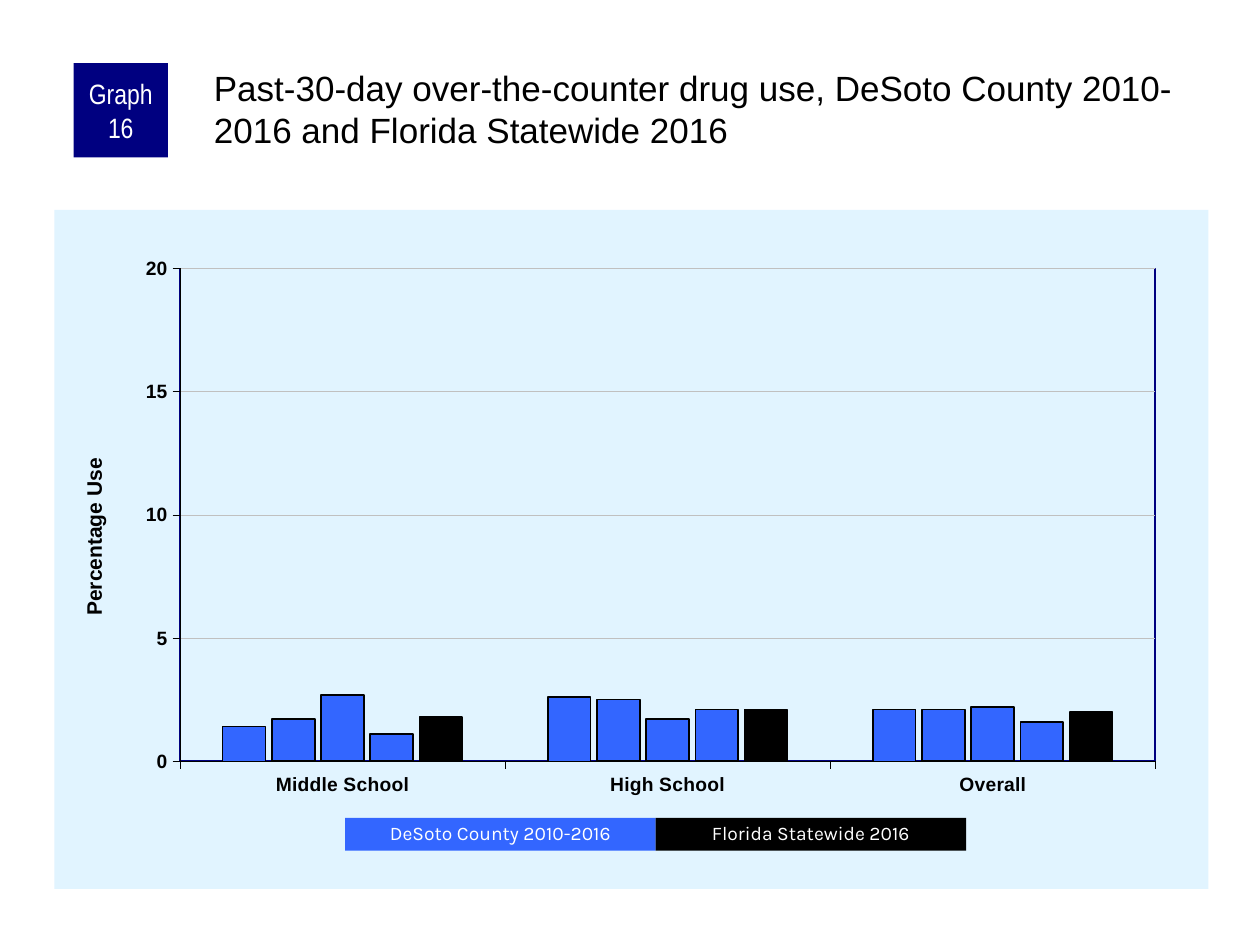
"""Build a slide with a column chart of over-the-counter drug use."""
from dataclasses import dataclass

from lxml import etree
from pptx import Presentation
from pptx.chart.data import CategoryChartData
from pptx.dml.color import RGBColor
from pptx.enum import chart as ch
from pptx.enum import shapes, text
from pptx.oxml import parse_xml
from pptx.oxml.ns import nsdecls, qn
from pptx.util import Pt


@dataclass(frozen=True)
class Theme:
    navy: str = "000080"
    blue: str = "3366FF"
    black: str = "000000"
    white: str = "FFFFFF"
    sky: str = "E1F4FF"
    grey: str = "C0C0C0"
    head: float = 20
    badge: float = 16
    axis: float = 12
    label: float = 11
    base: float = 8


@dataclass(frozen=True)
class Box:
    left: float
    top: float
    width: float
    height: float

    def pts(self) -> list:
        return [Pt(v) for v in (self.left, self.top, self.width, self.height)]


@dataclass(frozen=True)
class Tile:
    words: str
    box: Box
    fill: str
    face: str
    size: float
    frame: dict
    space: float = 1


@dataclass(frozen=True)
class Bar:
    name: str
    vals: tuple
    fill: str
    line: float = 1


T = Theme()
GROUPS = ("Middle School", "High School", "Overall")
BARS = (
    Bar("Series 1", (1.4, 2.6, 2.1), T.blue, 0.75),
    Bar("Series 2", (1.7, 2.5, 2.1), T.blue),
    Bar("Series 3", (2.7, 1.7, 2.2), T.blue),
    Bar("Series 4", (1.1, 2.1, 1.6), T.blue),
    Bar("Series 5", (1.8, 2.1, 2.0), T.black),
)
KEYS = (("DeSoto County 2010-2016", T.blue), ("Florida Statewide 2016", T.black))
KEY = Box(197.3, 467.4, 177.4, 18.7)
BADGE = Tile("Graph 16", Box(42, 36, 54, 54), T.navy, "Arial Narrow", T.badge,
             {"margin_left": Pt(3.6), "margin_right": Pt(3.6),
              "margin_top": 0, "margin_bottom": 0})


def put(obj, vals: dict) -> None:
    for name, val in vals.items():
        setattr(obj, name, val)


def ink(font, size: float, hue: str, face: str = "Arial", bold: bool = False) -> None:
    put(font, {"size": Pt(size), "name": face, "bold": bold})
    font.color.rgb = RGBColor.from_string(hue)


def paint(fill, hue: str) -> None:
    fill.solid()
    fill.fore_color.rgb = RGBColor.from_string(hue)


def rule(line, hue: str, width: float) -> None:
    line.color.rgb = RGBColor.from_string(hue)
    line.width = Pt(width)


def head(slide, words: str, box: Box) -> None:
    title = slide.shapes.title
    put(title, dict(zip(("left", "top", "width", "height"), box.pts())))
    frame = title.text_frame
    frame.text = words
    put(frame, {"margin_left": Pt(2.2), "margin_top": Pt(2.2), "margin_right": 0,
                "margin_bottom": 0, "word_wrap": True,
                "auto_size": text.MSO_AUTO_SIZE.NONE,
                "vertical_anchor": text.MSO_ANCHOR.TOP})
    para = frame.paragraphs[0]
    para.alignment = text.PP_ALIGN.LEFT
    ink(para.runs[0].font, T.head, T.black)


def tile(slide, item: Tile) -> None:
    shape = slide.shapes.add_shape(shapes.MSO_SHAPE.RECTANGLE, *item.box.pts())
    shape.shadow.inherit = False
    paint(shape.fill, item.fill)
    shape.line.fill.background()
    frame = shape.text_frame
    frame.text = item.words
    put(frame, {"word_wrap": True, "vertical_anchor": text.MSO_ANCHOR.MIDDLE,
                **item.frame})
    para = frame.paragraphs[0]
    put(para, {"alignment": text.PP_ALIGN.CENTER, "line_spacing": item.space})
    ink(para.runs[0].font, item.size, T.white, item.face)


def place(node, spot: dict) -> None:
    slot = node.find(qn("c:layout"))
    if slot is None:
        slot = etree.Element(qn("c:layout"))
        node.insert(0, slot)
    area = etree.SubElement(slot, qn("c:manualLayout"))
    for tag, val in spot.items():
        etree.SubElement(area, qn(f"c:{tag}")).set("val", str(val))


def skin(fill: str, line: str):
    return parse_xml(f'<c:spPr {nsdecls("c", "a")}>{fill}{line}</c:spPr>')


def solid(hue: str) -> str:
    return f'<a:solidFill><a:srgbClr val="{hue}"/></a:solidFill>'


def graph(slide, box: Box) -> None:
    data = CategoryChartData()
    data.categories = GROUPS
    for bar in BARS:
        data.add_series(bar.name, bar.vals)
    chart = slide.shapes.add_chart(
        ch.XL_CHART_TYPE.COLUMN_CLUSTERED, *box.pts(), data).chart
    put(chart, {"has_legend": False, "has_title": False})
    ink(chart.font, T.base, T.black)
    plot = chart.plots[0]
    put(plot, {"gap_width": 200, "overlap": -15, "vary_by_categories": False})
    for bar, series in zip(BARS, plot.series):
        paint(series.format.fill, bar.fill)
        rule(series.format.line, T.black, bar.line)
    for axis in (chart.category_axis, chart.value_axis):
        put(axis, {"major_tick_mark": ch.XL_TICK_MARK.OUTSIDE,
                   "minor_tick_mark": ch.XL_TICK_MARK.NONE})
        ink(axis.tick_labels.font, T.label, T.black, bold=True)
        rule(axis.format.line, T.black, 0.25)
    axis = chart.value_axis
    put(axis, {"minimum_scale": 0, "maximum_scale": 20, "major_unit": 5,
               "has_major_gridlines": True})
    rule(axis.major_gridlines.format.line, T.grey, 0.25)
    frame = axis.axis_title.text_frame
    frame.text = "Percentage Use"
    ink(frame.paragraphs[0].runs[0].font, T.axis, T.black, bold=True)
    root = chart._chartSpace.find(qn("c:chart"))
    area = root.find(qn("c:plotArea"))
    edge = {"xMode": "edge", "yMode": "edge"}
    place(area.find(qn("c:valAx")).find(qn("c:title")), {**edge, "x": 0.02, "y": 0.36})
    place(area, {"layoutTarget": "inner", **edge,
                 "x": 0.109, "y": 0.086, "w": 0.845, "h": 0.726})
    area.append(skin("<a:noFill/>", f'<a:ln w="{int(Pt(1))}">{solid(T.navy)}</a:ln>'))
    root.addnext(skin(solid(T.sky), "<a:ln><a:noFill/></a:ln>"))


def main() -> None:
    deck = Presentation()
    put(deck, {"slide_width": Pt(720), "slide_height": Pt(540)})
    slide = deck.slides.add_slide(deck.slide_layouts[5])
    head(slide, "Past-30-day over-the-counter drug use, DeSoto County 2010-2016 "
                "and Florida Statewide 2016", Box(120, 36, 570, 60))
    graph(slide, Box(31, 120, 659.5, 388))
    tile(slide, BADGE)
    for i, (words, fill) in enumerate(KEYS):
        box = Box(KEY.left + i * KEY.width, KEY.top, KEY.width, KEY.height)
        tile(slide, Tile(words, box, fill, "Karla", T.label, {}, 0.9))
    deck.save("out.pptx")


if __name__ == "__main__":
    main()
